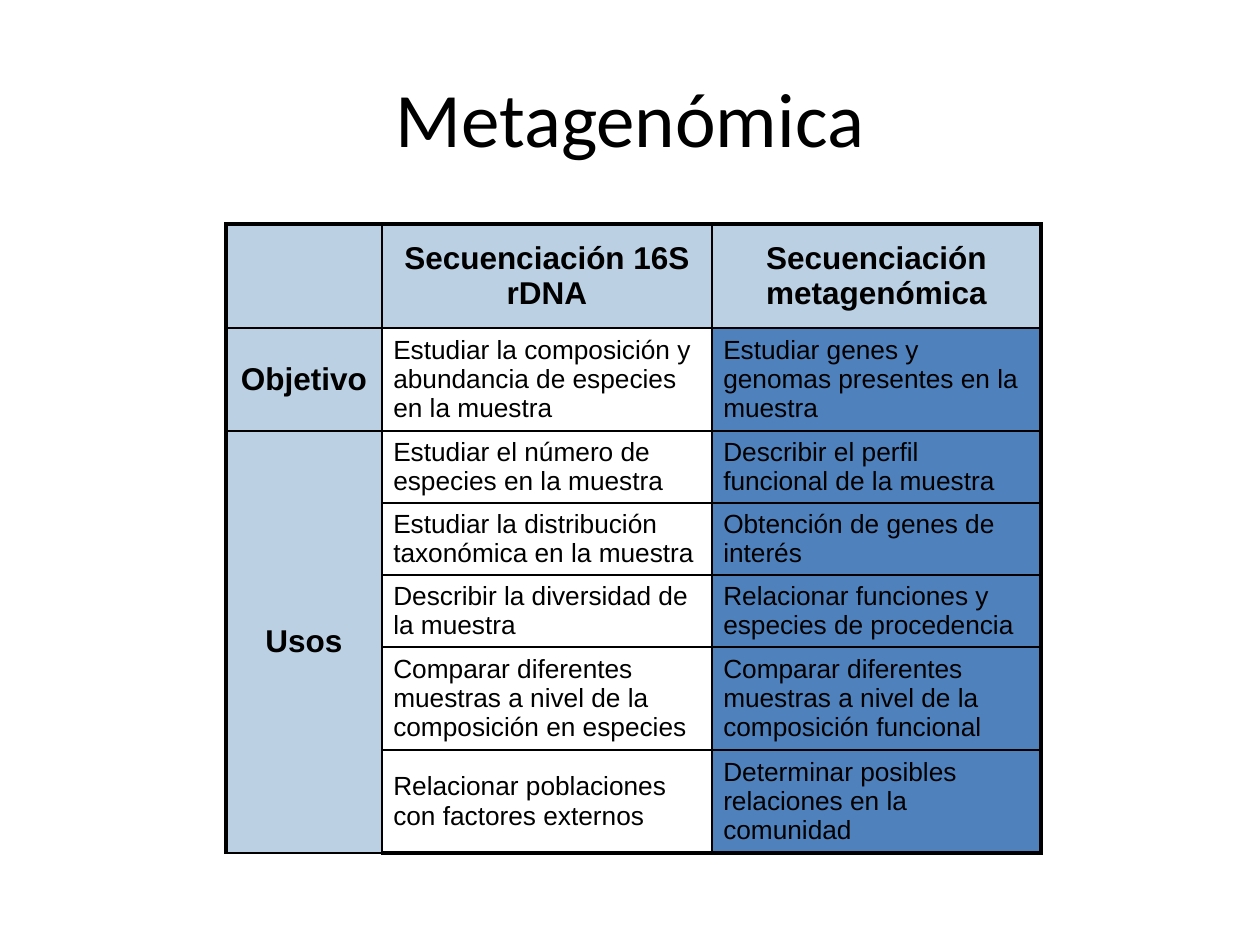
from lxml import etree
from pptx import Presentation
from pptx import util as u
from pptx.dml import color
from pptx.enum import text
from pptx.oxml import ns

PX_PER_INCH = 126
BLACK, HEADING_BLUE, METAGENOMIC_BLUE = "000000", "BBD0E3", "4F81BD"
THIN, THICK = 1, 2.25
COLUMN_WIDTHS = [156, 330, 329]
ROW_HEIGHTS = [104, 103, 72, 72, 72, 103, 103]
ROWS = [
    ("", "Secuenciación 16S rDNA", "Secuenciación metagenómica"),
    ("Objetivo", "Estudiar la composición y abundancia de especies en la muestra",
     "Estudiar genes y genomas presentes en la muestra"),
    ("Usos", "Estudiar el número de especies en la muestra",
     "Describir el perfil funcional de la muestra"),
    ("", "Estudiar la distribución taxonómica en la muestra",
     "Obtención de genes de interés"),
    ("", "Describir la diversidad de la muestra",
     "Relacionar funciones y especies de procedencia"),
    ("", "Comparar diferentes muestras a nivel de la composición en especies",
     "Comparar diferentes muestras a nivel de la composición funcional"),
    ("", "Relacionar poblaciones con factores externos",
     "Determinar posibles relaciones en la comunidad"),
]


def px(length):
    return u.Emu(round(length * u.Inches(1) / PX_PER_INCH))


def rgb(value):
    return color.RGBColor.from_string(value)


def style_paragraph(paragraph, font_name, size, bold, align):
    paragraph.alignment = align
    paragraph.font.name = font_name
    paragraph.font.size = u.Pt(size)
    paragraph.font.bold = bold
    paragraph.font.color.rgb = rgb(BLACK)


def add_title(slide, wording):
    title = slide.shapes.title
    title.left, title.top, title.width, title.height = map(px, (63, 38, 1134, 157))
    title.text_frame.text = wording
    title.text_frame.vertical_anchor = text.MSO_ANCHOR.MIDDLE
    style_paragraph(title.text_frame.paragraphs[0], "Calibri", 44, False,
                    text.PP_ALIGN.CENTER)


def set_borders(cell, widths):
    properties = cell._tc.get_or_add_tcPr()
    for position, (side, width) in enumerate(widths.items()):
        line = etree.Element(ns.qn(f"a:ln{side}"), w=str(u.Pt(width)))
        fill = etree.SubElement(line, ns.qn("a:solidFill"))
        etree.SubElement(fill, ns.qn("a:srgbClr"), val=BLACK)
        properties.insert(position, line)


def format_cell(cell, wording, fill, is_heading):
    cell.text = wording
    cell.vertical_anchor = text.MSO_ANCHOR.MIDDLE
    cell.margin_left = cell.margin_right = u.Inches(0.09)
    cell.margin_top = cell.margin_bottom = u.Inches(0.05)
    align = text.PP_ALIGN.CENTER if is_heading else text.PP_ALIGN.LEFT
    style_paragraph(cell.text_frame.paragraphs[0], "Arial",
                    18 if is_heading else 15, is_heading, align)
    if fill:
        cell.fill.solid()
        cell.fill.fore_color.rgb = rgb(fill)
    else:
        cell.fill.background()


def add_comparison(slide):
    last_row, last_column = len(ROWS) - 1, len(COLUMN_WIDTHS) - 1
    comparison = slide.shapes.add_table(
        len(ROWS), len(COLUMN_WIDTHS), px(226), px(224),
        px(sum(COLUMN_WIDTHS)), px(sum(ROW_HEIGHTS))).table
    comparison.first_row = comparison.horz_banding = False
    for column, width in zip(comparison.columns, COLUMN_WIDTHS):
        column.width = px(width)
    for row, height in zip(comparison.rows, ROW_HEIGHTS):
        row.height = px(height)
    for r, wordings in enumerate(ROWS):
        for c, wording in enumerate(wordings):
            is_heading = r == 0 or c == 0
            body_fill = METAGENOMIC_BLUE if c == last_column else None
            cell = comparison.cell(r, c)
            format_cell(cell, wording, HEADING_BLUE if is_heading else body_fill,
                        is_heading)
            set_borders(cell, {
                "L": THICK if c == 0 else THIN,
                "R": THICK if c == last_column else THIN,
                "T": THICK if r == 0 else THIN,
                "B": THICK if r == last_row else THIN,
            })
    comparison.cell(2, 0).merge(comparison.cell(last_row, 0))


def main():
    deck = Presentation()
    deck.slide_width, deck.slide_height = px(1260), px(945)
    slide = deck.slides.add_slide(deck.slide_layouts[5])
    add_title(slide, "Metagenómica")
    add_comparison(slide)
    deck.save("out.pptx")


if __name__ == "__main__":
    main()
